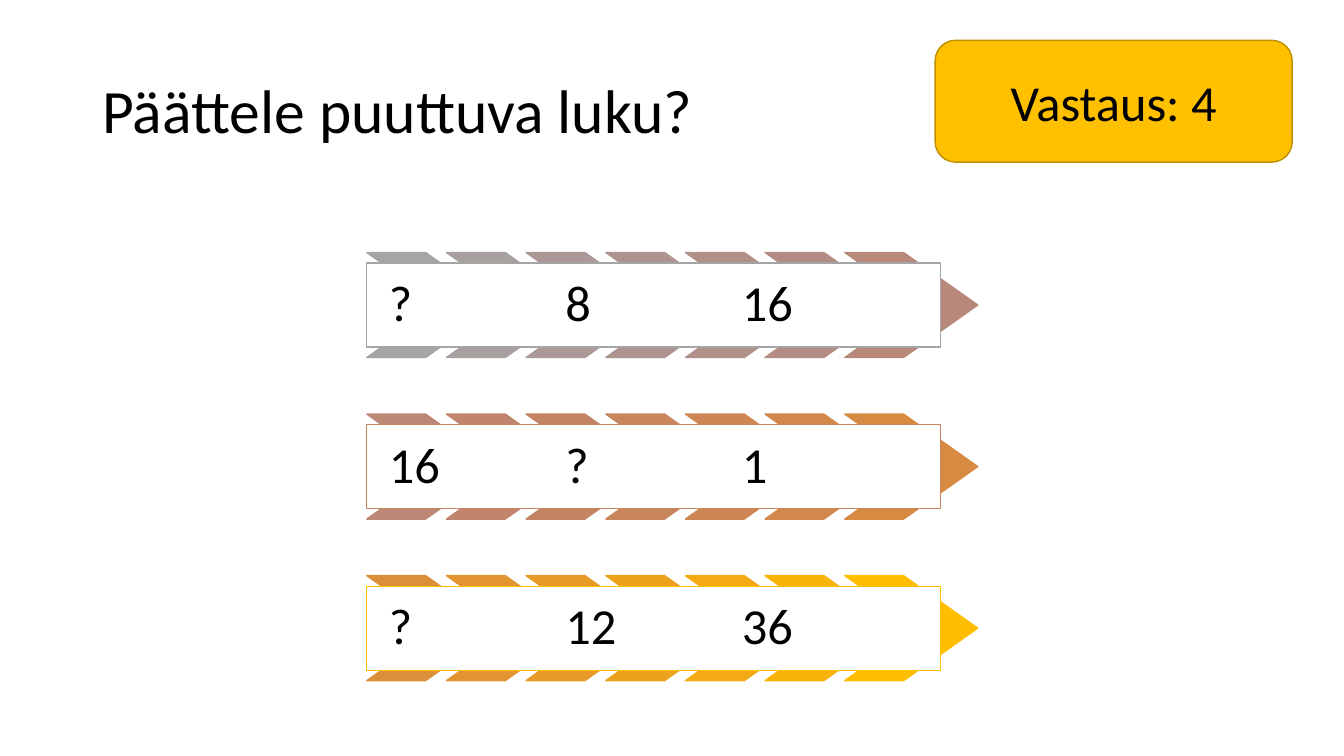
from colorsys import hls_to_rgb
from dataclasses import dataclass

from lxml import etree
from pptx import Presentation
from pptx.dml.color import RGBColor
from pptx.enum.shapes import MSO_SHAPE
from pptx.enum.text import MSO_ANCHOR, PP_ALIGN
from pptx.oxml.ns import qn
from pptx.util import Pt

CHEVRON, RECT, ROUNDED = MSO_SHAPE.CHEVRON, MSO_SHAPE.RECTANGLE, MSO_SHAPE.ROUNDED_RECTANGLE
LEFT, CENTER, MIDDLE = PP_ALIGN.LEFT, PP_ALIGN.CENTER, MSO_ANCHOR.MIDDLE
FONT = "Calibri"
LEFT_EDGE, FIRST_TOP, ROW_PITCH = 262, 180.4, 115.4
CHEVRONS_PER_ROW, CHEVRON_PITCH = 7, 56.9
LAST_STEP = 20
TAB_STEP = 126


@dataclass
class Box:
    left: float
    top: float
    width: float
    height: float


@dataclass
class Sequence:
    numbers: tuple[str, str, str]
    outline_step: int


SEQUENCES = [
    Sequence(("?", "8", "16"), 0),
    Sequence(("16", "?", "1"), 10),
    Sequence(("?", "12", "36"), 20),
]


def color(hex_text: str) -> RGBColor:
    return RGBColor.from_string(hex_text)


def gradient_hex(step: int) -> str:
    t = step / LAST_STEP
    rgb = hls_to_rgb(t * 45 / 360, 0.647 - 0.147 * t, t)
    return "".join(f"{round(c * 255):02X}" for c in rgb)


def add_shape(shapes, kind, box: Box, fill: str, line: str):
    sp = shapes.add_shape(kind, Pt(box.left), Pt(box.top), Pt(box.width), Pt(box.height))
    sp.shadow.inherit = False
    sp.fill.solid()
    sp.fill.fore_color.rgb = color(fill)
    sp.line.color.rgb = color(line)
    sp.line.width = Pt(1)
    return sp


def write(sp, text: str, size: float, align, spacing: float = 1.0):
    tf = sp.text_frame
    tf.text = text
    tf.word_wrap = True
    tf.vertical_anchor = MIDDLE
    p = tf.paragraphs[0]
    p.alignment = align
    p.line_spacing = spacing
    r = p.runs[0]
    r.font.name = FONT
    r.font.size = Pt(size)
    r.font.color.rgb = color("000000")
    return p


def add_tabs(p, count: int) -> None:
    tabs = etree.SubElement(p._p.get_or_add_pPr(), qn("a:tabLst"))
    for i in range(1, count + 1):
        etree.SubElement(tabs, qn("a:tab"), pos=str(Pt(TAB_STEP * i)), algn="l")


def add_sequence(shapes, row: int, seq: Sequence) -> None:
    top = FIRST_TOP + row * ROW_PITCH
    for i in range(CHEVRONS_PER_ROW):
        fill = gradient_hex(row * CHEVRONS_PER_ROW + i)
        box = Box(LEFT_EDGE + i * CHEVRON_PITCH, top, 95, 75)
        sp = add_shape(shapes, CHEVRON, box, fill, fill)
        sp.adjustments[0] = 0.706
    box = Box(LEFT_EDGE, top + 7.6, 409.7, 60)
    sp = add_shape(shapes, RECT, box, "FFFFFF", gradient_hex(seq.outline_step))
    p = write(sp, "".join(f"{n}\t" for n in seq.numbers), 36, CENTER, 0.9)
    add_tabs(p, len(seq.numbers))


def main() -> None:
    prs = Presentation()
    prs.slide_width, prs.slide_height = Pt(960), Pt(540)
    s = prs.slides.add_slide(prs.slide_layouts[5])

    title = s.shapes.title
    title.left, title.top, title.width, title.height = Pt(66), Pt(28.75), Pt(828), Pt(104.4)
    write(title, "Päättele puuttuva luku?", 44, LEFT, 0.9)

    diagram = s.shapes.add_group_shape()
    for row, seq in enumerate(SEQUENCES):
        add_sequence(diagram.shapes, row, seq)

    answer = add_shape(s.shapes, ROUNDED, Box(668, 28.8, 255, 87), "FFC000", "BD8E00")
    write(answer, "Vastaus: 4", 36, CENTER)

    prs.save("out.pptx")


if __name__ == "__main__":
    main()
